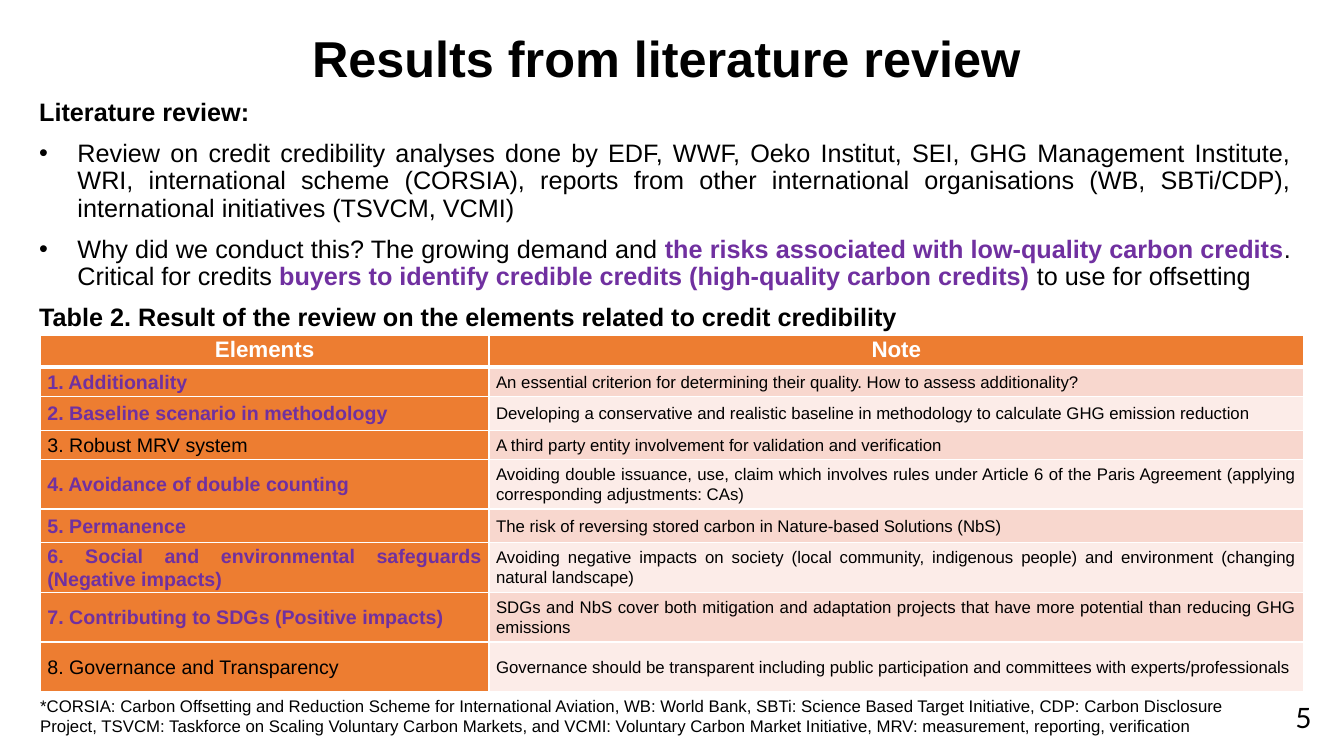
from lxml import etree
from pptx import Presentation
from pptx.dml.color import RGBColor
from pptx.enum import text as t
from pptx.oxml import ns
from pptx.util import Inches, Pt

BLACK = RGBColor(0x00, 0x00, 0x00)
WHITE = RGBColor(0xFF, 0xFF, 0xFF)
PURPLE = RGBColor(0x70, 0x30, 0xA0)
ORANGE = RGBColor(0xED, 0x7D, 0x31)
BANDS = RGBColor(0xF8, 0xD7, 0xCE), RGBColor(0xFC, 0xEC, 0xE8)

# Content: each paragraph is (bulleted, [(text, style)])
TITLE = "Results from literature review"
PLAIN = {"bold": False, "color": BLACK}
BOLD = {"bold": True, "color": BLACK}
KEY = {"bold": True, "color": PURPLE}
HEAD = {"bold": True, "color": WHITE}
BODY = [
    (False, [("Literature review:", BOLD)]),
    (True, [("Review on credit credibility analyses done by EDF, WWF, Oeko Institut, SEI, "
             "GHG Management Institute, WRI, international scheme (CORSIA), reports from "
             "other international organisations (WB, SBTi/CDP), international initiatives "
             "(TSVCM, VCMI)", PLAIN)]),
    (True, [("Why did we conduct this? The growing demand and ", PLAIN),
            ("the risks associated with low-quality carbon credits", KEY),
            (". Critical for credits ", PLAIN),
            ("buyers to identify credible credits (high-quality carbon credits) ", KEY),
            ("to use for offsetting", PLAIN)]),
    (False, [("Table 2. Result of the review on the elements related to credit credibility",
              BOLD)]),
]
HEADS = "Elements", "Note"
# Row height, element, element style, note
ROWS = [
    (0.29, "1. Additionality", KEY,
     "An essential criterion for determining their quality. How to assess additionality?"),
    (0.34, "2. Baseline scenario in methodology", KEY,
     "Developing a conservative and realistic baseline in methodology to calculate "
     "GHG emission reduction"),
    (0.29, "3. Robust MRV system", PLAIN,
     "A third party entity involvement for validation and verification"),
    (0.49, "4. Avoidance of double counting", KEY,
     "Avoiding double issuance, use, claim which involves rules under Article 6 of the "
     "Paris Agreement (applying corresponding adjustments: CAs)"),
    (0.33, "5. Permanence", KEY,
     "The risk of reversing stored carbon in Nature-based Solutions (NbS)"),
    (0.49, "6. Social and environmental safeguards (Negative impacts)", KEY,
     "Avoiding negative impacts on society (local community, indigenous people) and "
     "environment (changing natural landscape)"),
    (0.49, "7. Contributing to SDGs (Positive impacts)", KEY,
     "SDGs and NbS cover both mitigation and adaptation projects that have more "
     "potential than reducing GHG emissions"),
    (0.49, "8. Governance and Transparency", PLAIN,
     "Governance should be transparent including public participation and committees "
     "with experts/professionals"),
]
HEAD_H = 0.31
COLS = 4.45, 8.08
FOOT = ("*CORSIA: Carbon Offsetting and Reduction Scheme for International Aviation, "
        "WB: World Bank, SBTi: Science Based Target Initiative, CDP: Carbon Disclosure "
        "Project, TSVCM: Taskforce on Scaling Voluntary Carbon Markets, and VCMI: "
        "Voluntary Carbon Market Initiative, MRV: measurement, reporting, verification")
PAGE = "5"


def apply(item, **values):
    for name, value in values.items():
        setattr(item, name, value)


def write(para, words, size, style, face="Arial"):
    run = para.add_run()
    run.text = words
    apply(run.font, size=Pt(size), name=face, bold=style["bold"])
    run.font.color.rgb = style["color"]


def textbox(box):
    frame = slide.shapes.add_textbox(*map(Inches, box)).text_frame
    frame.word_wrap = True
    return frame


def bullet(para):
    props = para._p.get_or_add_pPr()
    props.set("marL", str(Inches(0.38)))
    props.set("indent", str(-Inches(0.38)))
    etree.SubElement(props, ns.qn("a:buFont")).set("typeface", "Arial")
    etree.SubElement(props, ns.qn("a:buChar")).set("char", "•")


def border(cell, widths):
    props = cell._tc.get_or_add_tcPr()
    for side, width in widths.items():
        line = etree.SubElement(props, ns.qn("a:ln" + side), w=str(Pt(width)))
        fill = etree.SubElement(line, ns.qn("a:solidFill"))
        etree.SubElement(fill, ns.qn("a:srgbClr"), val=str(WHITE))


def fill_cell(cell, words, size, style, color, align, anchor, top=1, low=1):
    border(cell, {"L": 1, "R": 1, "T": top, "B": low})
    cell.fill.solid()
    cell.fill.fore_color.rgb = color
    apply(cell, margin_left=Inches(0.07), margin_right=Inches(0.07),
          margin_top=0, margin_bottom=0, vertical_anchor=anchor)
    para = cell.text_frame.paragraphs[0]
    apply(para, alignment=align, line_spacing=1.07)
    write(para, words, size, style)


deck = Presentation()
apply(deck, slide_width=Inches(13.33), slide_height=Inches(7.5))
slide = deck.slides.add_slide(deck.slide_layouts[5])

# Title
title = slide.shapes.title
apply(title, left=Inches(0.61), top=Inches(0.3), width=Inches(12), height=Inches(0.61))
title.text_frame.vertical_anchor = t.MSO_ANCHOR.MIDDLE
para = title.text_frame.paragraphs[0]
apply(para, alignment=t.PP_ALIGN.CENTER, line_spacing=0.9)
write(para, TITLE, 36, BOLD)

# Review text
frame = textbox((0.29, 0.94, 12.61, 2.38))
for i, (dotted, runs) in enumerate(BODY):
    para = frame.add_paragraph() if i else frame.paragraphs[0]
    if dotted:
        bullet(para)
    apply(para, alignment=t.PP_ALIGN.JUSTIFY, line_spacing=0.9,
          space_before=Pt(10 if i else 0))
    for words, style in runs:
        write(para, words, 18, style)

# Table of elements
highs = [HEAD_H] + [row[0] for row in ROWS]
grid = slide.shapes.add_table(
    len(highs), len(COLS), Inches(0.4), Inches(3.33),
    Inches(sum(COLS)), Inches(sum(highs))).table
for col, width in zip(grid.columns, COLS):
    col.width = Inches(width)
for row, high in zip(grid.rows, highs):
    row.height = Inches(high)
for c, words in enumerate(HEADS):
    fill_cell(grid.cell(0, c), words, 16, HEAD, ORANGE,
              t.PP_ALIGN.CENTER, t.MSO_ANCHOR.TOP, low=3)
for r, (high, name, style, note) in enumerate(ROWS, 1):
    top = 3 if r == 1 else 1
    side = t.PP_ALIGN.LEFT if r == 2 else t.PP_ALIGN.JUSTIFY
    fill_cell(grid.cell(r, 0), name, 14, style, ORANGE,
              side, t.MSO_ANCHOR.MIDDLE, top)
    fill_cell(grid.cell(r, 1), note, 12, PLAIN, BANDS[(r - 1) % 2],
              t.PP_ALIGN.JUSTIFY, t.MSO_ANCHOR.MIDDLE, top)

# Footnote and page number
write(textbox((0.3, 6.85, 12.31, 0.5)).paragraphs[0], FOOT, 12, PLAIN)
write(textbox((12.75, 6.9, 0.79, 0.44)).paragraphs[0], PAGE, 20, PLAIN, "Lato")

deck.save("out.pptx")
